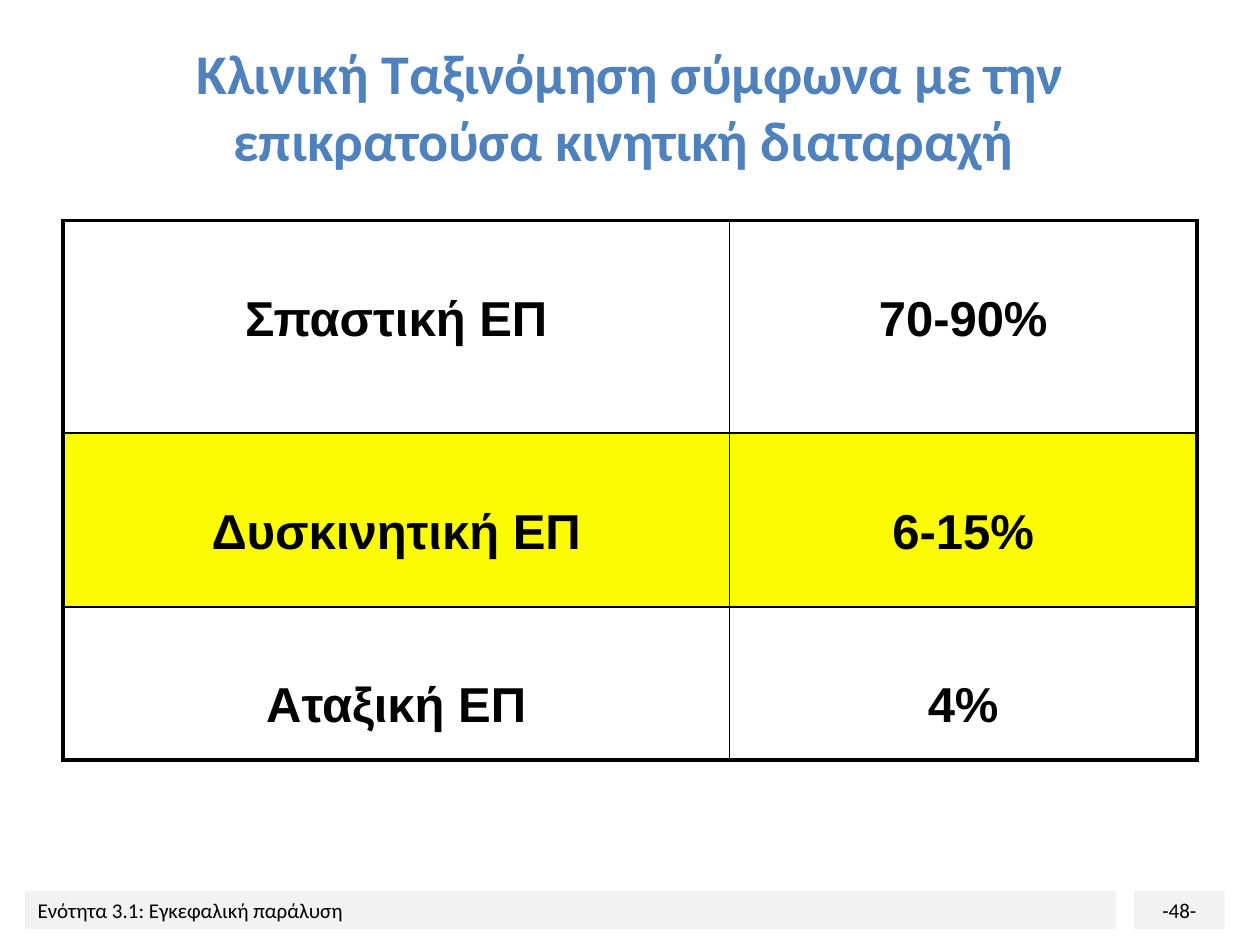
from pptx import Presentation
from pptx.dml.color import RGBColor
from pptx.enum.shapes import MSO_SHAPE
from pptx.enum.text import MSO_ANCHOR, MSO_AUTO_SIZE, PP_ALIGN
from pptx.oxml import parse_xml
from pptx.oxml.ns import nsdecls
from pptx.util import Pt

COLORS = {
    "title": "4F81BD",
    "text": "000000",
    "border": "000000",
    "footer": "F2F2F2",
    "plain": "FFFFFF",
    "highlight": "FBFB03",
}
OUTER, INNER = 2.25, 1


def write(frame, text, font, size, color, align, bold=False):
    """Fill a text frame with one formatted paragraph."""
    frame.text = text
    paragraph = frame.paragraphs[0]
    paragraph.alignment = align
    run_font = paragraph.runs[0].font
    run_font.name, run_font.size, run_font.bold = font, Pt(size), bold
    run_font.color.rgb = RGBColor.from_string(COLORS[color])


def set_borders(cell, widths):
    """Insert the side lines before the cell's fill, as the schema requires."""
    properties = cell._tc.get_or_add_tcPr()
    for position, (side, width) in enumerate(widths.items()):
        properties.insert(position, parse_xml(
            f'<a:ln{side} {nsdecls("a")} w="{Pt(width)}"><a:solidFill>'
            f'<a:srgbClr val="{COLORS["border"]}"/></a:solidFill></a:ln{side}>'))


prs = Presentation()
prs.slide_width, prs.slide_height = Pt(720), Pt(540)
slide = prs.slides.add_slide(prs.slide_layouts[5])

# Title
title = slide.shapes.title
title.left, title.top, title.width, title.height = Pt(36), Pt(21.6), Pt(648), Pt(77.8)
write(title.text_frame, "Κλινική Ταξινόμηση σύμφωνα με την επικρατούσα κινητική διαταραχή ",
      "Calibri", 32, "title", PP_ALIGN.CENTER, bold=True)
title.text_frame.auto_size = MSO_AUTO_SIZE.NONE
title.text_frame.vertical_anchor = MSO_ANCHOR.MIDDLE

# Footer: unit name and page number
footer_parts = [
    ("Ενότητα 3.1: Εγκεφαλική παράλυση", 14.4, 623.5, PP_ALIGN.LEFT),
    ("-48-", 648, 51.8, PP_ALIGN.CENTER),
]
for text, left, width, align in footer_parts:
    bar = slide.shapes.add_shape(MSO_SHAPE.RECTANGLE, Pt(left), Pt(509), Pt(width), Pt(21.8))
    bar.shadow.inherit = False
    bar.fill.solid()
    bar.fill.fore_color.rgb = RGBColor.from_string(COLORS["footer"])
    bar.line.fill.background()
    write(bar.text_frame, text, "Calibri", 12, "text", align)
    bar.text_frame.word_wrap = True

# Table of types and their shares
types = [
    ("Σπαστική ΕΠ", "70-90%", 121.5, "plain"),
    ("Δυσκινητική ΕΠ", "6-15%", 99.3, "highlight"),
    ("Αταξική ΕΠ", "4%", 87.5, "plain"),
]
column_widths = [380.8, 267.2]
table = slide.shapes.add_table(len(types), 2, Pt(36), Pt(126), Pt(648), Pt(308.3)).table
table.first_row = table.horz_banding = False
for column, width in zip(table.columns, column_widths):
    column.width = Pt(width)

for row, (kind, share, height, fill) in enumerate(types):
    table.rows[row].height = Pt(height)
    for col, text in enumerate((kind, share)):
        cell = table.cell(row, col)
        write(cell.text_frame, text, "Arial", 28, "text", PP_ALIGN.CENTER, bold=True)
        cell.vertical_anchor = MSO_ANCHOR.TOP
        cell.margin_left = cell.margin_right = Pt(10)
        cell.margin_top, cell.margin_bottom = Pt(41), Pt(3.6)
        cell.fill.solid()
        cell.fill.fore_color.rgb = RGBColor.from_string(COLORS[fill])
        set_borders(cell, {
            "L": OUTER if col == 0 else INNER,
            "R": OUTER if col == 1 else INNER,
            "T": OUTER if row == 0 else INNER,
            "B": OUTER if row == len(types) - 1 else INNER,
        })

prs.save("out.pptx")
